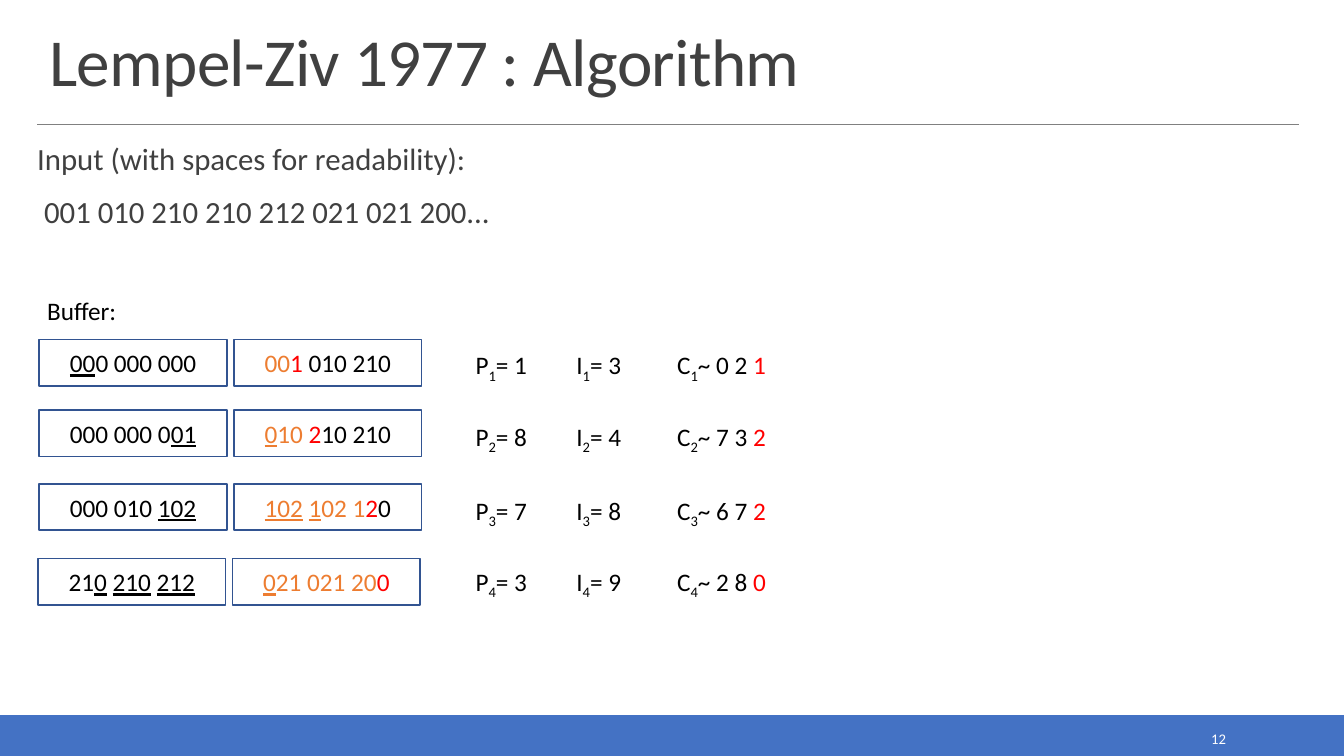
from lxml import etree
from pptx import Presentation
from pptx.dml.color import RGBColor
from pptx.enum import shapes, text
from pptx.oxml import ns
from pptx.util import Pt

BLACK, GREY, WHITE = "000000", "404040", "FFFFFF"
BLUE, BOX_LINE, RULE = "4472C4", "325491", "808080"
MATCH, NEXT = "ED7D31", "FF0000"

PLAIN = {}
UNDER = {"underline": True}
SUB = {"baseline": -25000}
FOUND = {"color": MATCH}
FOUND_UNDER = {"color": MATCH, "underline": True}
NEW = {"color": NEXT}

# left, top, top of the code, search buffer, lookahead buffer, P, I, C, next symbol
STEPS = [
    (28.1, 242.6, 246.2,
     [("00", UNDER), ("0 000 000", PLAIN)],
     [("00", FOUND), ("1", NEW), (" 010 210", PLAIN)],
     1, 3, "0 2", "1"),
    (28.1, 293, 297.4,
     [("000 000 0", PLAIN), ("01", UNDER)],
     [("0", FOUND_UNDER), ("10 ", FOUND), ("2", NEW), ("10 210", PLAIN)],
     8, 4, "7 3", "2"),
    (28.1, 345.6, 349.9,
     [("000 010 ", PLAIN), ("102", UNDER)],
     [("102", FOUND_UNDER), (" ", FOUND), ("1", FOUND_UNDER), ("02 1", FOUND),
      ("2", NEW), ("0", PLAIN)],
     7, 8, "6 7", "2"),
    (27.1, 398.9, 401,
     [("21", PLAIN), ("0", UNDER), (" ", PLAIN), ("210", UNDER), (" ", PLAIN),
      ("212", UNDER)],
     [("0", FOUND_UNDER), ("21 021 20", FOUND), ("0", NEW)],
     3, 9, "2 8", "0"),
]
BOX_WIDTH, BOX_HEIGHT, BOX_STEP = 134, 33.2, 139


def rgb(value):
    return RGBColor.from_string(value)


def place(shape, left, top, width, height):
    shape.left, shape.top = Pt(left), Pt(top)
    shape.width, shape.height = Pt(width), Pt(height)


def add_span(para, words, size=18, color=BLACK, underline=False, baseline=0, spacing=0):
    span = para.add_run()
    span.text = words
    font = span.font
    font.name, font.size, font.color.rgb = "Calibri", Pt(size), rgb(color)
    if underline:
        font.underline = True
    properties = font._element
    if baseline:
        properties.set("baseline", str(baseline))
    if spacing:
        properties.set("spc", str(spacing))


def add_tabs(para, *stops):
    properties = para._p.get_or_add_pPr()
    tabs = etree.SubElement(properties, ns.qn("a:tabLst"))
    for stop in stops:
        etree.SubElement(tabs, ns.qn("a:tab"), pos=str(Pt(stop)), algn="l")


class Slide:
    def __init__(self, deck):
        self.page = deck.slides.add_slide(deck.slide_layouts[1])

    def title(self, words, left, top, width, height):
        box = self.page.shapes.title
        place(box, left, top, width, height)
        frame = box.text_frame
        frame.auto_size = text.MSO_AUTO_SIZE.NONE
        frame.vertical_anchor = text.MSO_ANCHOR.BOTTOM
        para = frame.paragraphs[0]
        para.alignment, para.line_spacing = text.PP_ALIGN.LEFT, 0.85
        add_span(para, words, size=48, color=GREY, spacing=-50)

    def body(self, lines, left, top, width, height):
        box = self.page.placeholders[1]
        place(box, left, top, width, height)
        frame = box.text_frame
        frame.auto_size = text.MSO_AUTO_SIZE.NONE
        frame.margin_left = frame.margin_right = 0
        frame.margin_top = frame.margin_bottom = Pt(3)
        for index, line in enumerate(lines):
            para = frame.add_paragraph() if index else frame.paragraphs[0]
            para.line_spacing = 0.9
            para.space_before, para.space_after = Pt(12), Pt(2)
            properties = para._p.get_or_add_pPr()
            properties.set("marL", "0")
            properties.set("indent", "0")
            etree.SubElement(properties, ns.qn("a:buNone"))
            add_span(para, line, size=22, color=GREY)

    def rectangle(self, left, top, width, height, line, fill=None):
        box = self.page.shapes.add_shape(
            shapes.MSO_SHAPE.RECTANGLE, Pt(left), Pt(top), Pt(width), Pt(height))
        box.shadow.inherit = False
        if fill:
            box.fill.solid()
            box.fill.fore_color.rgb = rgb(fill)
        else:
            box.fill.background()
        box.line.color.rgb, box.line.width = rgb(line), Pt(1.25)
        return box

    def buffer(self, spans, left, top):
        box = self.rectangle(left, top, BOX_WIDTH, BOX_HEIGHT, BOX_LINE)
        frame = box.text_frame
        frame.vertical_anchor = text.MSO_ANCHOR.MIDDLE
        para = frame.paragraphs[0]
        para.alignment = text.PP_ALIGN.CENTER
        for words, style in spans:
            add_span(para, words, **style)

    def label(self, spans, left, top, width, height=29, align=text.PP_ALIGN.LEFT,
              anchor=text.MSO_ANCHOR.TOP):
        box = self.page.shapes.add_textbox(Pt(left), Pt(top), Pt(width), Pt(height))
        frame = box.text_frame
        frame.word_wrap, frame.vertical_anchor = True, anchor
        para = frame.paragraphs[0]
        para.alignment = align
        for words, style in spans:
            add_span(para, words, **style)
        return para

    def rule(self, left, top, right):
        line = self.page.shapes.add_connector(
            shapes.MSO_CONNECTOR.STRAIGHT, Pt(left), Pt(top), Pt(right), Pt(top))
        line.line.color.rgb, line.line.width = rgb(RULE), Pt(0.5)
        etree.SubElement(line._element.spPr, ns.qn("a:effectLst"))


def main():
    deck = Presentation()
    deck.slide_width, deck.slide_height = Pt(960), Pt(540)
    slide = Slide(deck)
    slide.rectangle(0, 511.2, 960, 28.8, BLUE, fill=BLUE)
    slide.rule(26.6, 88.7, 928)
    slide.title("Lempel-Ziv 1977 : Algorithm", 28.1, 14.4, 901.4, 60.5)
    slide.body(["Input (with spaces for readability):",
                " 001 010 210 210 212 021 021 200..."], 26.6, 100, 901.4, 79.2)
    slide.label([("12", {"size": 10.5, "color": WHITE})], 779.8, 517.7, 103, 20.2,
                align=text.PP_ALIGN.RIGHT, anchor=text.MSO_ANCHOR.MIDDLE)
    slide.label([("Buffer:", PLAIN)], 26.6, 207.4, 124.6)

    for number, step in enumerate(STEPS, 1):
        left, top, code_top, search, ahead, position, length, code, symbol = step
        slide.buffer(search, left, top)
        slide.buffer(ahead, left + BOX_STEP, top)
        index = (str(number), SUB)
        para = slide.label(
            [("P", PLAIN), index, (f"= {position}\tI", PLAIN), index,
             (f"= {length} \tC", PLAIN), index, (f"~ {code} ", PLAIN), (symbol, NEW)],
            332.6, code_top, 357)
        add_tabs(para, 72, 144)

    deck.save("out.pptx")


if __name__ == "__main__":
    main()
